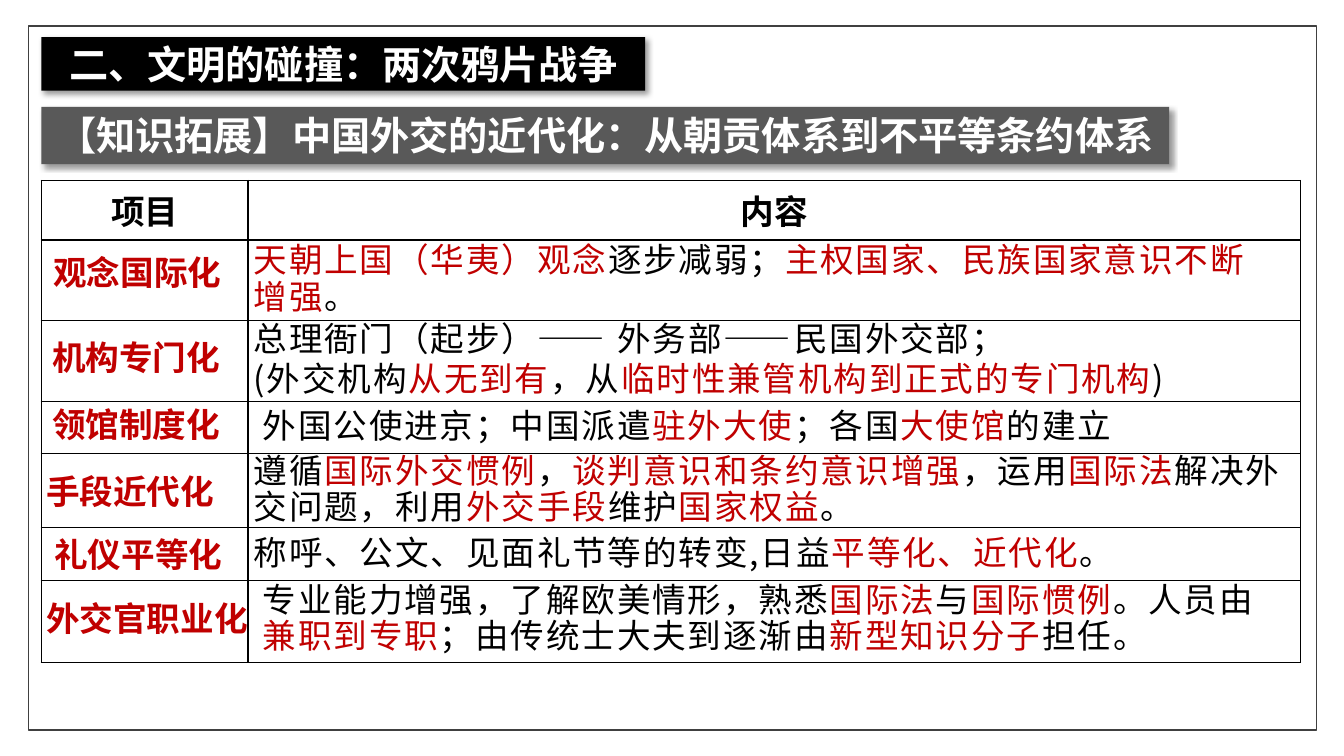
from pptx import Presentation
from pptx.dml.color import RGBColor
from pptx.enum.shapes import MSO_SHAPE
from pptx.enum.text import MSO_ANCHOR, MSO_AUTO_SIZE, PP_ALIGN
from pptx.oxml import parse_xml
from pptx.oxml.ns import nsdecls, qn
from pptx.util import Pt

RECT = MSO_SHAPE.RECTANGLE
TOP, MIDDLE = MSO_ANCHOR.TOP, MSO_ANCHOR.MIDDLE
GROW, FIXED = MSO_AUTO_SIZE.SHAPE_TO_FIT_TEXT, MSO_AUTO_SIZE.NONE
LEFT, CENTER = PP_ALIGN.LEFT, PP_ALIGN.CENTER

COLORS = {"black": "000000", "white": "FFFFFF", "red": "C00000",
          "gray": "595959", "frame": "404040"}
FONT = "Noto Sans CJK SC"
HEADS = ["项目", "内容"]
COLS = [147.6, 751.7]
ROWS = [42.5, 57.6, 57.6, 37.4, 52.6, 38.2, 58.3]

LABELS = [
    ("观念国际化", 31, 176.4, 134.6),
    ("机构专门化", 30.2, 236.9, 134.6),
    ("领馆制度化", 30.2, 285.1, 134.6),
    ("手段近代化", 25.9, 332.6, 134.6),
    ("礼仪平等化", 31.7, 378, 134.6),
    ("外交官职业化", 25.9, 423.4, 158.4),
]

NOTES = [
    ("|天朝上国（华夷）观念|逐步减弱；|主权国家、民族国家意识不断增强|。",
     (174.2, 170.6, 741.6, 59.8), 0.9),
    ("总理衙门（起步）—— 外务部——民国外交部；\n"
     "(外交机构|从无到有|，从|临时性兼管机构到正式的专门机构|)",
     (174.2, 223.2, 715, 65.5), None),
    ("外国公使进京；中国派遣|驻外大使|；各国|大使馆|的建立",
     (180.7, 290.9, 679, 30.2), 0.8),
    ("遵循|国际外交惯例|，|谈判意识和条约意识增强|，运用|国际法|"
     "解决外交问题，利用|外交手段|维护|国家权益|。",
     (174.2, 321.1, 768.2, 59.8), 0.9),
    ("称呼、公文、见面礼节等的转变,日益|平等化、近代化|。",
     (174.2, 382.3, 650.9, 30.2), 0.8),
    ("专业能力增强，了解欧美情形，熟悉|国际法|与|国际惯例|。人员由|"
     "兼职到专职|；由传统士大夫到逐渐由|新型知识分子|担任。",
     (180.7, 413.3, 730.1, 59.8), 0.9),
]


def paint(name):
    return RGBColor.from_string(COLORS[name])


def write(frame, text, size=24, color="black", bold=False, align=LEFT,
          lead=None, after=None, track=None):
    for row, line in enumerate(text.split("\n")):
        para = frame.add_paragraph() if row else frame.paragraphs[0]
        para.alignment = align
        if lead:
            para.line_spacing = lead
        if after:
            para.space_after = Pt(after)
        for turn, part in enumerate(line.split("|")):
            if not part:
                continue
            run = para.add_run()
            run.text = part
            font = run.font
            font.name, font.size, font.bold = FONT, Pt(size), bold
            font.color.rgb = paint("red" if turn % 2 else color)
            props = run._r.get_or_add_rPr()
            props.append(parse_xml(
                f'<a:ea {nsdecls("a")} typeface="{FONT}"/>'))
            if track:
                props.set("spc", str(round(track * 100)))


class Page:
    def __init__(self, slide):
        self.slide = slide
        self.shapes = slide.shapes

    def frame(self, *box):
        shape = self.shapes.add_shape(RECT, *map(Pt, box))
        shape.shadow.inherit = False
        shape.fill.background()
        shape.line.color.rgb = paint("frame")
        shape.line.width = Pt(1)

    def style(self, shape, text, fill, fit, anchor, after=None):
        shape.fill.solid()
        shape.fill.fore_color.rgb = paint(fill)
        shape.line.fill.background()
        shape.shadow.inherit = False
        shape._element.spPr.find(qn("a:effectLst")).append(parse_xml(
            f'<a:outerShdw {nsdecls("a")} blurRad="{Pt(4)}" dist="{Pt(3)}" '
            'dir="2700000" algn="tl" rotWithShape="0">'
            f'<a:srgbClr val="{COLORS["black"]}"><a:alpha val="40000"/>'
            '</a:srgbClr></a:outerShdw>'))
        body = shape.text_frame
        body.word_wrap, body.auto_size = True, fit
        body.vertical_anchor = anchor
        write(body, text, size=28, color="white", bold=True,
              align=CENTER, after=after)

    def title(self, text, *box):
        shape = self.shapes.title
        shape.left, shape.top, shape.width, shape.height = map(Pt, box)
        shape._element.spPr.append(parse_xml(
            f'<a:prstGeom {nsdecls("a")} prst="roundRect"><a:avLst/>'
            '</a:prstGeom>'))
        self.style(shape, text, "black", FIXED, MIDDLE)

    def bar(self, text, *box):
        shape = self.shapes.add_shape(RECT, *map(Pt, box))
        self.style(shape, text, "gray", GROW, TOP, after=6)

    def grid(self, left, top):
        table = self.shapes.add_table(
            len(ROWS), len(COLS), Pt(left), Pt(top),
            Pt(sum(COLS)), Pt(sum(ROWS))).table
        table.first_row = table.horz_banding = False
        for col, width in zip(table.columns, COLS):
            col.width = Pt(width)
        for row, height in zip(table.rows, ROWS):
            row.height = Pt(height)
        for cell in table.iter_cells():
            props = cell._tc.get_or_add_tcPr()
            for side in ("lnL", "lnR", "lnT", "lnB"):
                props.append(parse_xml(
                    f'<a:{side} {nsdecls("a")} w="{Pt(1)}"><a:solidFill>'
                    f'<a:srgbClr val="{COLORS["black"]}"/></a:solidFill>'
                    f'</a:{side}>'))
            cell.fill.background()
        for cell, head in zip(table.rows[0].cells, HEADS):
            write(cell.text_frame, head, bold=True, align=CENTER)

    def note(self, text, box, wrap=True, **form):
        body = self.shapes.add_textbox(*map(Pt, box)).text_frame
        body.word_wrap, body.auto_size = wrap, GROW
        write(body, text, **form)


def main():
    deck = Presentation()
    deck.slide_width, deck.slide_height = Pt(960), Pt(540)
    page = Page(deck.slides.add_slide(deck.slide_layouts[5]))
    page.frame(20.2, 18.7, 920.2, 502.6)
    page.bar("【知识拓展】中国外交的近代化：从朝贡体系到不平等条约体系",
             29.5, 76.3, 805.7, 41)
    page.title("二、文明的碰撞：两次鸦片战争", 29.5, 26.6, 431.3, 38.2)
    page.grid(29.5, 128.9)
    for text, left, top, width in LABELS:
        page.note(text, (left, top, width, 36), wrap=False,
                  color="red", bold=True)
    for text, box, lead in NOTES:
        page.note(text, box, lead=lead, track=1.3)
    deck.save("out.pptx")


if __name__ == "__main__":
    main()
